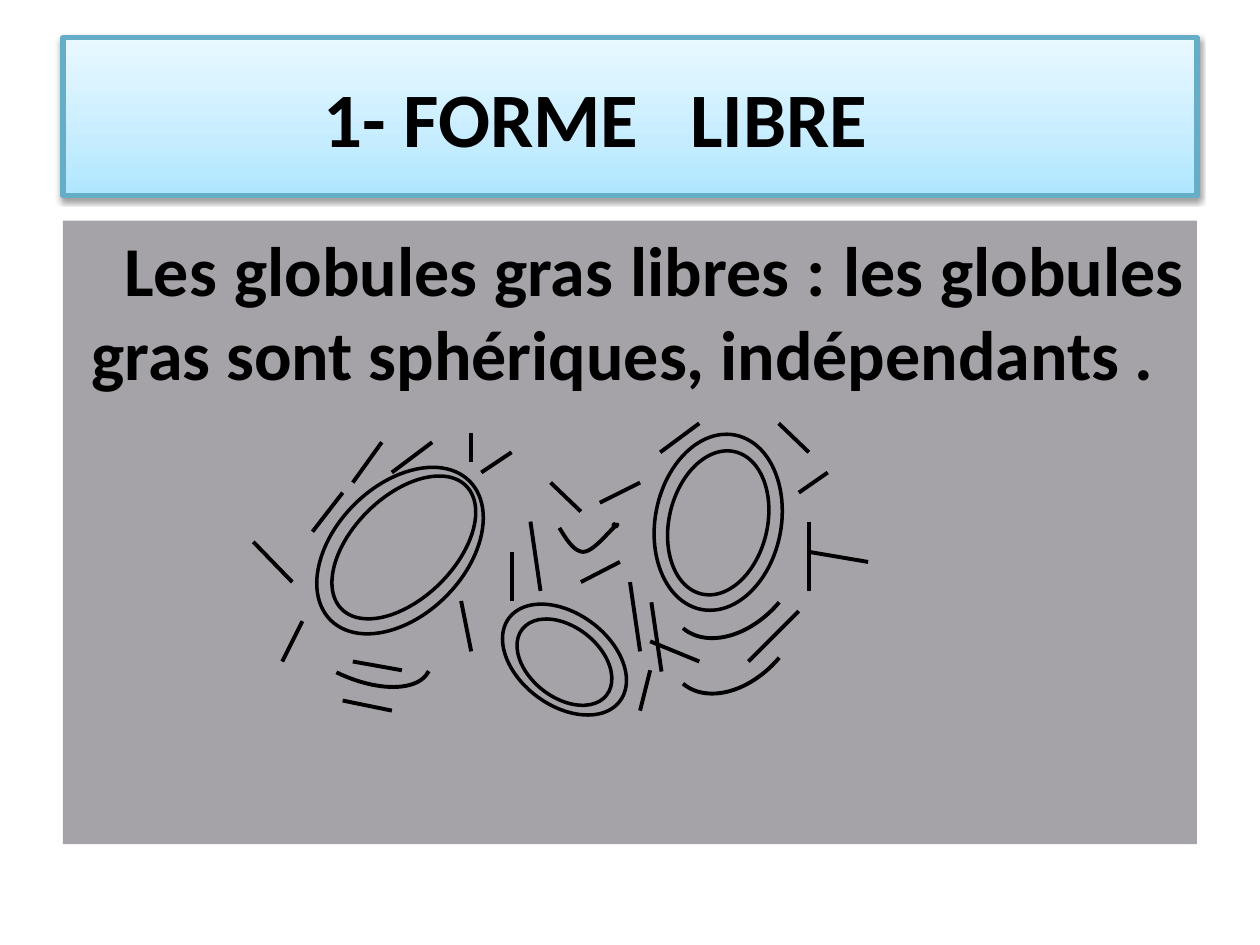
"""Build the slide on free fat globules: title, statement and sketch."""
from lxml.etree import SubElement
from pptx import Presentation
from pptx.dml.color import RGBColor
from pptx.enum.shapes import MSO_CONNECTOR as CONN, MSO_SHAPE as SHAPE
from pptx.enum.text import MSO_ANCHOR as ANCHOR, PP_ALIGN as ALIGN
from pptx.oxml import parse_xml
from pptx.oxml.ns import nsdecls, qn
from pptx.util import Pt

PX = 9144


def rgb(value):
    return RGBColor.from_string(value)


def add(kind, box, line=None, weight=2, rotation=0):
    sp = s.shapes.add_shape(kind, *(v * PX for v in box))
    sp.shadow.inherit = False
    sp.rotation = rotation
    sp.fill.background()
    if line:
        sp.line.color.rgb = rgb(line)
        sp.line.width = Pt(weight)
    else:
        sp.line.fill.background()
    return sp


prs = Presentation()
prs.slide_width, prs.slide_height = 1000 * PX, 750 * PX
s = prs.slides.add_slide(prs.slide_layouts[6])

title = add(SHAPE.RECTANGLE, (50, 30, 900, 125), "66AEC7", 3)
title.fill.gradient()
grad = title.element.spPr.find(qn("a:gradFill"))
stops = "".join(
    f'<a:gs pos="{pos}"><a:srgbClr val="{color}"/></a:gs>'
    for pos, color in ((0, "AEE6FF"), (35000, "C6EDFF"), (100000, "E9F8FF")))
grad.getparent().replace(grad, parse_xml(
    f'<a:gradFill {nsdecls("a")} rotWithShape="1"><a:gsLst>{stops}</a:gsLst>'
    '<a:lin ang="16200000" scaled="0"/></a:gradFill>'))
shadow = SubElement(title.element.spPr.find(qn("a:effectLst")), qn("a:outerShdw"),
                    blurRad="40000", dist="20000", dir="5400000", rotWithShape="0")
color = SubElement(shadow, qn("a:srgbClr"), val="000000")
SubElement(color, qn("a:alpha"), val="38000")

body = add(SHAPE.RECTANGLE, (50, 175, 900, 495))
body.fill.solid()
body.fill.fore_color.rgb = rgb("A5A3A8")

for sp, text, size, anchor, align, right in (
    (title, "1- FORME   LIBRE", 44, ANCHOR.MIDDLE, ALIGN.CENTER, 64),
    (body, "Les globules gras libres : les globules gras sont sphériques, indépendants .",
     40, ANCHOR.TOP, ALIGN.JUSTIFY, 10),
):
    tf = sp.text_frame
    tf.word_wrap = True
    tf.vertical_anchor = anchor
    tf.margin_right = right * PX
    p = tf.paragraphs[0]
    p.text = text
    p.alignment = align
    p.font.name, p.font.size, p.font.bold = "Calibri", Pt(size), True
    p.font.color.rgb = rgb("000000")
pPr = body.text_frame.paragraphs[0]._p.get_or_add_pPr()
pPr.set("marL", str(13 * PX))
pPr.set("indent", str(26 * PX))

for *box, rotation in (
    (266, 359, 103, 156, 45), (280, 365, 81, 139, 45.4),
    (520, 344, 100, 141, 10.9), (531, 357, 78, 116, 13.2),
    (393, 487, 110, 73, 36.7), (420, 483, 56, 85, 308.1),
):
    add(SHAPE.OVAL, box, "000000", 2, rotation)

for *box, rotation, flipped in (
    (216, 471, 131, 66, 26, True),
    (519, 404, 130, 90, 130.2, False),
    (519, 448, 130, 90, 130.2, False),
):
    sp = add(SHAPE.ARC, box, "000000", 2.25, rotation)
    if flipped:
        sp.element.spPr.find(qn("a:xfrm")).set("flipV", "1")

start = (444, 419)
curves = (((450, 429), (456, 438), (463, 438)),
          ((471, 438), (484, 421), (488, 418)),
          ((492, 414), (489, 418), (489, 418)),
          ((489, 418), (488, 416), (488, 416)),
          ((487, 416), (487, 417), (487, 417)),
          ((487, 417), (487, 418), (488, 418)))
points, a = [], start
for b, c, d in curves:
    for t in (i / 12 for i in range(1, 13)):
        u = 1 - t
        points.append([u**3 * a[k] + 3 * u * u * t * b[k] + 3 * u * t * t * c[k] + t**3 * d[k]
                       for k in (0, 1)])
    a = d
fb = s.shapes.build_freeform(start[0] * PX, start[1] * PX)
fb.add_line_segments([(round(x * PX), round(y * PX)) for x, y in points], close=False)
sp = fb.convert_to_shape()
sp.shadow.inherit = False
sp.fill.background()
sp.line.color.rgb = rgb("000000")
sp.line.width = Pt(2.25)

for ends in (
    (476, 399, 508, 383), (437, 383, 461, 406), (272, 391, 248, 422),
    (303, 351, 280, 383), (634, 391, 657, 375), (642, 414, 642, 469),
    (642, 438, 689, 446), (406, 359, 382, 375), (311, 375, 343, 351),
    (374, 344, 374, 367), (272, 556, 311, 564), (280, 525, 319, 532),
    (201, 430, 232, 462), (240, 493, 224, 525), (516, 509, 555, 525),
    (366, 477, 374, 517), (421, 414, 429, 469), (516, 532, 508, 564),
    (517, 478, 525, 533), (406, 438, 406, 477), (500, 462, 508, 517),
    (634, 485, 594, 525), (618, 336, 642, 359), (524, 359, 555, 336),
    (461, 462, 492, 446),
):
    cn = s.shapes.add_connector(CONN.STRAIGHT, *(v * PX for v in ends))
    cn.line.color.rgb = rgb("000000")
    cn.line.width = Pt(2.25)
    SubElement(cn._element.spPr, qn("a:effectLst"))

prs.save("out.pptx")
